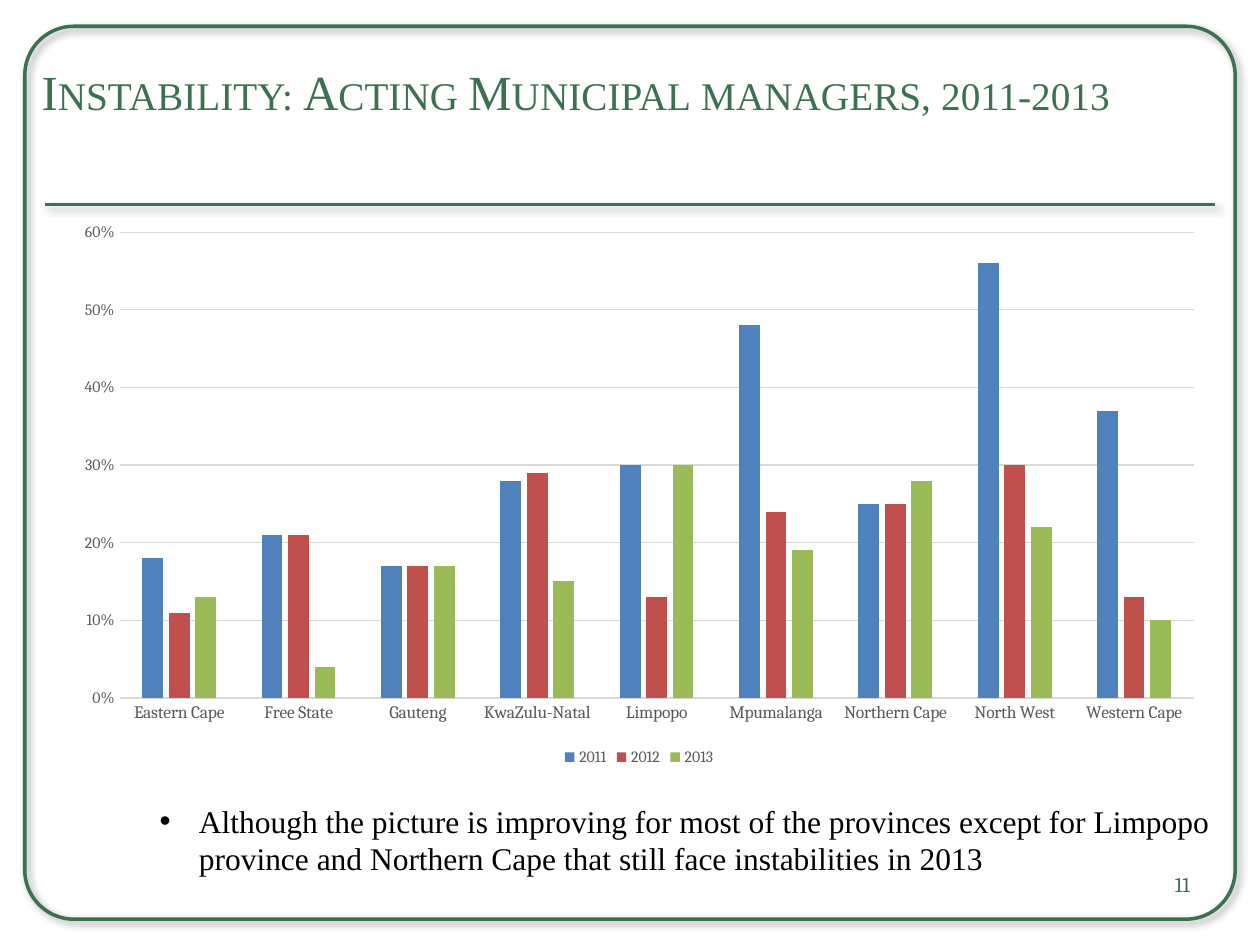
"""Builds the slide on acting municipal managers by province, 2011-2013."""
from dataclasses import dataclass

from lxml.etree import SubElement
from pptx import Presentation
from pptx.chart.data import CategoryChartData
from pptx.dml.color import RGBColor
from pptx.enum.chart import XL_CHART_TYPE, XL_LEGEND_POSITION, XL_TICK_MARK
from pptx.enum.shapes import MSO_CONNECTOR, MSO_SHAPE
from pptx.enum.text import MSO_ANCHOR, PP_ALIGN
from pptx.oxml.ns import qn
from pptx.util import Cm, Pt


@dataclass(frozen=True)
class Theme:
    green: str = "3B7150"
    black: str = "000000"
    grey: str = "595959"
    grid: str = "D9D9D9"
    series: tuple = ("4F81BD", "C0504D", "9BBB59")
    serif: str = "Times New Roman"
    label: str = "Cambria"
    title_size: int = 28
    body_size: int = 18
    number_size: int = 12
    category_size: int = 10
    small_size: int = 9
    rule_width: float = 2
    grid_width: float = 0.75


class SlideBuilder:
    def __init__(self, page, theme):
        self.page = page
        self.theme = theme

    def style_font(self, font, name, size, color):
        font.name = name
        font.size = Pt(size)
        font.color.rgb = RGBColor.from_string(color)

    def style_line(self, line, color, width):
        line.color.rgb = RGBColor.from_string(color)
        line.width = Pt(width)

    def add_shadow(self, shape):
        properties = shape._element.spPr
        for inherited in properties.findall(qn("a:effectLst")):
            properties.remove(inherited)
        effects = SubElement(properties, qn("a:effectLst"))
        shadow = SubElement(effects, qn("a:outerShdw"), blurRad=str(Pt(4)), dist=str(Pt(3)),
                            dir="2700000", algn="tl", rotWithShape="0")
        color = SubElement(shadow, qn("a:srgbClr"), val=self.theme.black)
        SubElement(color, qn("a:alpha"), val="40000")

    def frame(self, left, top, width, height):
        shape = self.page.shapes.add_shape(
            MSO_SHAPE.ROUNDED_RECTANGLE, Cm(left), Cm(top), Cm(width), Cm(height))
        shape.adjustments[0] = 0.055
        shape.fill.background()
        self.style_line(shape.line, self.theme.green, self.theme.rule_width)
        self.add_shadow(shape)

    def rule(self, left, right, top):
        line = self.page.shapes.add_connector(
            MSO_CONNECTOR.STRAIGHT, Cm(left), Cm(top), Cm(right), Cm(top))
        self.style_line(line.line, self.theme.green, self.theme.rule_width)
        self.add_shadow(line)

    def text(self, left, top, width, height, words, font, size, color,
             inset=0.13, bottom=0.13, anchor=MSO_ANCHOR.MIDDLE, align=PP_ALIGN.LEFT):
        box = self.page.shapes.add_textbox(Cm(left), Cm(top), Cm(width), Cm(height))
        frame = box.text_frame
        frame.word_wrap = True
        frame.vertical_anchor = anchor
        frame.margin_left = frame.margin_right = Cm(inset)
        frame.margin_top, frame.margin_bottom = Cm(0.13), Cm(bottom)
        para = frame.paragraphs[0]
        para.alignment = align
        span = para.add_run()
        span.text = words
        self.style_font(span.font, font, size, color)
        return para

    def title(self, *place, words):
        para = self.text(*place, words, self.theme.serif, self.theme.title_size,
                         self.theme.green, bottom=1.12)
        para.runs[0].font._element.set("cap", "small")

    def bullet(self, *place, words):
        para = self.text(*place, words, self.theme.serif, self.theme.body_size,
                         self.theme.black, inset=0.25, anchor=MSO_ANCHOR.TOP)
        properties = para._p.get_or_add_pPr()
        properties.set("marL", str(Cm(0.79)))
        properties.set("indent", str(-Cm(0.79)))
        SubElement(properties, qn("a:buFont"), typeface="Arial")
        SubElement(properties, qn("a:buChar"), char="•")

    def page_number(self, *place, words):
        self.text(*place, words, self.theme.label, self.theme.number_size,
                  self.theme.green, align=PP_ALIGN.RIGHT)

    def column_chart(self, left, top, width, height, categories, series):
        theme = self.theme
        data = CategoryChartData(number_format="0%")
        data.categories = categories
        for name, values in series.items():
            data.add_series(name, values)
        chart = self.page.shapes.add_chart(
            XL_CHART_TYPE.COLUMN_CLUSTERED, Cm(left), Cm(top), Cm(width), Cm(height), data).chart
        self.style_font(chart.font, theme.label, theme.category_size, theme.black)
        chart.has_title = False
        chart.has_legend = True
        chart.legend.position = XL_LEGEND_POSITION.BOTTOM
        chart.legend.include_in_layout = False
        self.style_font(chart.legend.font, theme.label, theme.small_size, theme.grey)

        plot = chart.plots[0]
        plot.gap_width, plot.overlap = 219, -27
        plot.vary_by_categories = False
        for column, color in zip(plot.series, theme.series):
            column.format.fill.solid()
            column.format.fill.fore_color.rgb = RGBColor.from_string(color)

        axes = ((chart.category_axis, theme.category_size), (chart.value_axis, theme.small_size))
        for axis, size in axes:
            axis.major_tick_mark = axis.minor_tick_mark = XL_TICK_MARK.NONE
            self.style_font(axis.tick_labels.font, theme.label, size, theme.grey)
        self.style_line(chart.category_axis.format.line, theme.grid, theme.grid_width)
        value_axis = chart.value_axis
        value_axis.minimum_scale, value_axis.maximum_scale = 0, 0.6
        value_axis.major_unit = 0.1
        value_axis.tick_labels.number_format = "0%"
        value_axis.tick_labels.number_format_is_linked = False
        value_axis.format.line.fill.background()
        self.style_line(value_axis.major_gridlines.format.line, theme.grid, theme.grid_width)


def main():
    deck = Presentation()
    deck.slide_width, deck.slide_height = Cm(25.4), Cm(19.05)
    builder = SlideBuilder(deck.slides.add_slide(deck.slide_layouts[6]), Theme())

    builder.frame(0.5, 0.53, 24.4, 18)
    builder.rule(0.9, 24.5, 4.12)
    builder.title(0.71, 0.74, 24, 3.18, words="Instability: Acting Municipal managers, 2011-2013")
    builder.page_number(18.2, 17.32, 5.92, 1.02, words="11")
    builder.bullet(2.97, 16.03, 22.43, 1.8, words=(
        "Although the picture is improving for most of the provinces except for Limpopo "
        "province and Northern Cape that still face instabilities in 2013"))
    builder.column_chart(
        1.24, 4.27, 23.29, 11.28,
        ("Eastern Cape", "Free State", "Gauteng", "KwaZulu-Natal", "Limpopo",
         "Mpumalanga", "Northern Cape", "North West", "Western Cape"),
        {"2011": (0.18, 0.21, 0.17, 0.28, 0.3, 0.48, 0.25, 0.56, 0.37),
         "2012": (0.11, 0.21, 0.17, 0.29, 0.13, 0.24, 0.25, 0.3, 0.13),
         "2013": (0.13, 0.04, 0.17, 0.15, 0.3, 0.19, 0.28, 0.22, 0.1)})
    deck.save("out.pptx")


if __name__ == "__main__":
    main()
